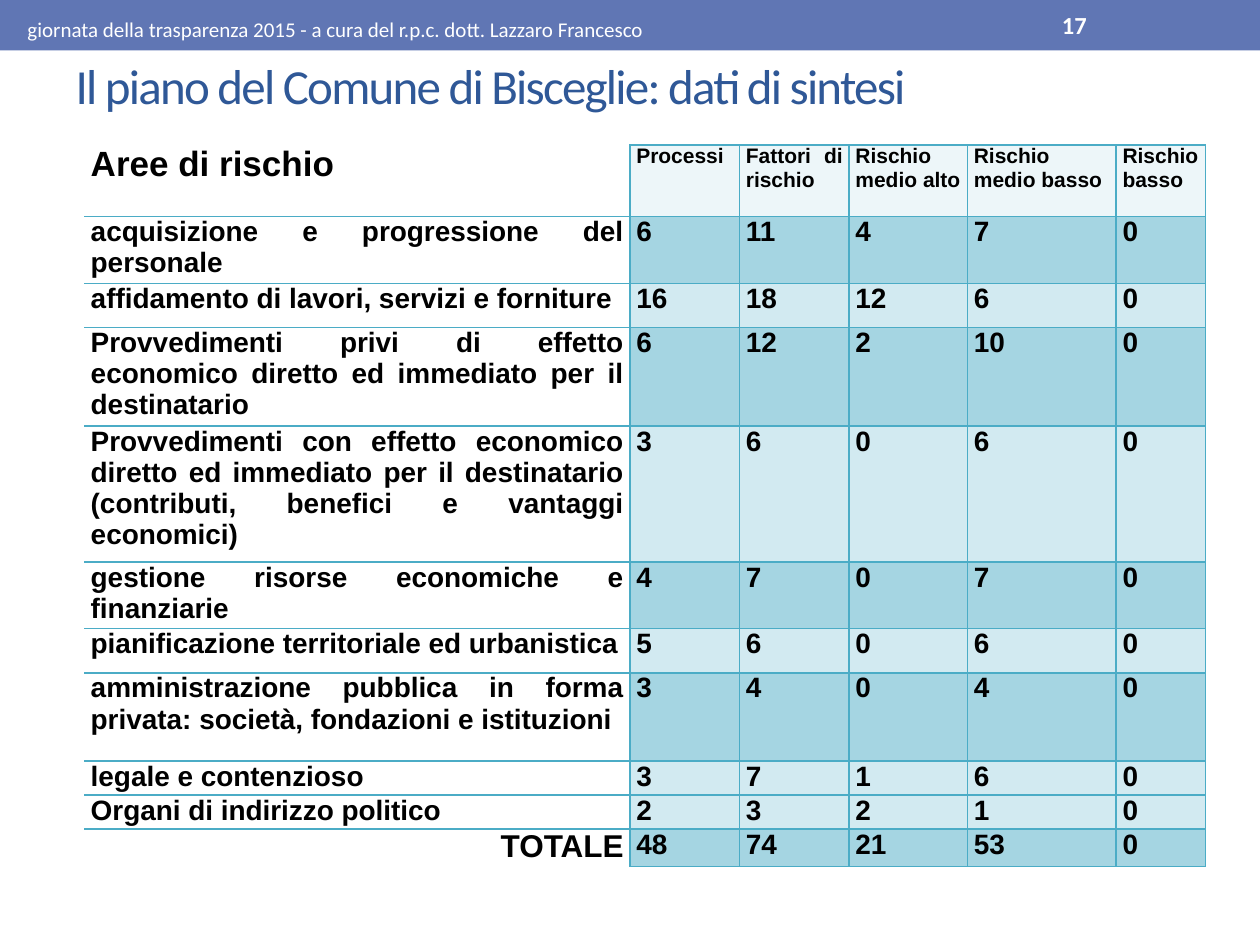
from dataclasses import dataclass

from lxml.etree import SubElement
from pptx import Presentation
from pptx.dml.color import RGBColor
from pptx.enum.shapes import MSO_SHAPE
from pptx.enum.text import MSO_ANCHOR, PP_ALIGN
from pptx.oxml.ns import qn
from pptx.util import Inches, Pt


@dataclass(frozen=True)
class Theme:
    # Colours
    bar: str = "6076B4"
    title: str = "2F5897"
    white: str = "FFFFFF"
    black: str = "000000"
    border: str = "4BACC6"
    header: str = "EDF6F9"
    dark: str = "A5D5E2"
    light: str = "D2EAF1"
    # Fonts and type sizes
    heading_font: str = "Calibri"
    table_font: str = "Arial"
    title_size: int = 28
    corner_size: int = 20
    total_size: int = 18
    body_size: int = 16
    number_size: int = 14
    small_size: int = 12


THEME = Theme()

COLUMN_WIDTHS = [4.33, 0.87, 0.87, 0.94, 1.18, 0.71]
HEADER_HEIGHT = 0.57
HEADERS = ["Aree di rischio", "Processi", "Fattori di rischio",
           "Rischio medio alto", "Rischio medio basso", "Rischio basso"]

# Height, band colour, area, values
AREAS = [
    (0.53, THEME.dark, "acquisizione e progressione del personale", (6, 11, 4, 7, 0)),
    (0.35, THEME.light, "affidamento di lavori, servizi e forniture", (16, 18, 12, 6, 0)),
    (0.78, THEME.dark, "Provvedimenti privi di effetto economico diretto ed "
     "immediato per il destinatario", (6, 12, 2, 10, 0)),
    (1.08, THEME.light, "Provvedimenti con effetto economico diretto ed immediato per "
     "il destinatario (contributi, benefici e vantaggi economici)", (3, 6, 0, 6, 0)),
    (0.53, THEME.dark, "gestione risorse economiche e finanziarie", (4, 7, 0, 7, 0)),
    (0.35, THEME.light, "pianificazione territoriale ed urbanistica", (5, 6, 0, 6, 0)),
    (0.7, THEME.dark, "amministrazione pubblica in forma privata: società, "
     "fondazioni e istituzioni", (3, 4, 0, 4, 0)),
    (0.27, THEME.light, "legale e contenzioso", (3, 7, 1, 6, 0)),
    (0.27, THEME.light, "Organi di indirizzo politico", (2, 3, 2, 1, 0)),
    (0.3, THEME.dark, "TOTALE", (48, 74, 21, 53, 0)),
]


def write_text(frame, text, *, size, font, color, bold=False,
               align=PP_ALIGN.LEFT, spacing=None):
    paragraph = frame.paragraphs[0]
    paragraph.alignment = align
    run = paragraph.add_run()
    run.text = text
    run.font.size = Pt(size)
    run.font.name = font
    run.font.bold = bold
    run.font.color.rgb = RGBColor.from_string(color)
    if spacing is not None:
        run.font._element.set("spc", str(int(spacing * 100)))


def set_borders(cell, visible_sides, color):
    properties = cell._tc.get_or_add_tcPr()
    for side in "LRTB":
        line = SubElement(properties, qn(f"a:ln{side}"), w=str(Pt(1)))
        if side in visible_sides:
            fill = SubElement(line, qn("a:solidFill"))
            SubElement(fill, qn("a:srgbClr"), val=color)
        else:
            SubElement(line, qn("a:noFill"))


class SlideBuilder:
    def __init__(self, slide, theme):
        self.slide = slide
        self.theme = theme

    def bar(self, left, top, width, height):
        shape = self.slide.shapes.add_shape(
            MSO_SHAPE.RECTANGLE, Inches(left), Inches(top), Inches(width), Inches(height))
        shape.shadow.inherit = False
        shape.fill.solid()
        shape.fill.fore_color.rgb = RGBColor.from_string(self.theme.bar)
        shape.line.fill.background()

    def title(self, text, left, top, width, height):
        shape = self.slide.shapes.title
        shape.left, shape.top = Inches(left), Inches(top)
        shape.width, shape.height = Inches(width), Inches(height)
        shape.text_frame.vertical_anchor = MSO_ANCHOR.MIDDLE
        write_text(shape.text_frame, text, size=self.theme.title_size,
                   font=self.theme.heading_font, color=self.theme.title, spacing=-1)

    def label(self, text, left, top, width, height, *, size, bold=False):
        shape = self.slide.shapes.add_textbox(
            Inches(left), Inches(top), Inches(width), Inches(height))
        shape.text_frame.word_wrap = True
        shape.text_frame.vertical_anchor = MSO_ANCHOR.MIDDLE
        write_text(shape.text_frame, text, size=size, bold=bold,
                   font=self.theme.heading_font, color=self.theme.white)

    def cell(self, cell, text, *, fill, size, borders="LRTB", align=PP_ALIGN.JUSTIFY):
        cell.margin_left = cell.margin_right = Inches(0.05)
        cell.margin_top = cell.margin_bottom = 0
        set_borders(cell, borders, self.theme.border)
        cell.fill.solid()
        cell.fill.fore_color.rgb = RGBColor.from_string(fill)
        write_text(cell.text_frame, text, size=size, bold=True, align=align,
                   font=self.theme.table_font, color=self.theme.black)

    def risk_table(self, left, top):
        theme = self.theme
        heights = [HEADER_HEIGHT] + [area[0] for area in AREAS]
        table = self.slide.shapes.add_table(
            len(heights), len(COLUMN_WIDTHS), Inches(left), Inches(top),
            Inches(sum(COLUMN_WIDTHS)), Inches(sum(heights))).table
        table.first_row = table.horz_banding = False
        for column, width in zip(table.columns, COLUMN_WIDTHS):
            column.width = Inches(width)
        for row, height in zip(table.rows, heights):
            row.height = Inches(height)

        # Header row
        self.cell(table.cell(0, 0), HEADERS[0], fill=theme.white,
                  size=theme.corner_size, borders="RB")
        for index, header in enumerate(HEADERS[1:], start=1):
            self.cell(table.cell(0, index), header, fill=theme.header, size=theme.small_size)

        # Risk areas, with the total in the last row
        for number, (_, band, area, values) in enumerate(AREAS, start=1):
            is_total = number == len(AREAS)
            self.cell(table.cell(number, 0), area, fill=theme.white,
                      size=theme.total_size if is_total else theme.body_size,
                      borders="RT" if is_total else "RTB",
                      align=PP_ALIGN.RIGHT if is_total else PP_ALIGN.JUSTIFY)
            for index, value in enumerate(values, start=1):
                self.cell(table.cell(number, index), str(value), fill=band,
                          size=theme.body_size)


def main():
    presentation = Presentation()
    presentation.slide_width, presentation.slide_height = Inches(10), Inches(7.5)
    slide = presentation.slides.add_slide(presentation.slide_layouts[5])
    builder = SlideBuilder(slide, THEME)

    # Top bar, table and title
    builder.bar(0, 0, 10, 0.4)
    builder.risk_table(0.67, 1.15)
    builder.title("Il piano del Comune di Bisceglie: dati di sintesi", 0.5, 0.44, 9, 0.47)

    # Text on the bar
    builder.label("giornata della trasparenza 2015 - a cura del r.p.c. dott. Lazzaro Francesco",
                  0.12, 0.02, 8.13, 0.42, size=THEME.small_size)
    builder.label("17", 8.33, 0.02, 1.17, 0.36, size=THEME.number_size, bold=True)

    presentation.save("out.pptx")


if __name__ == "__main__":
    main()
